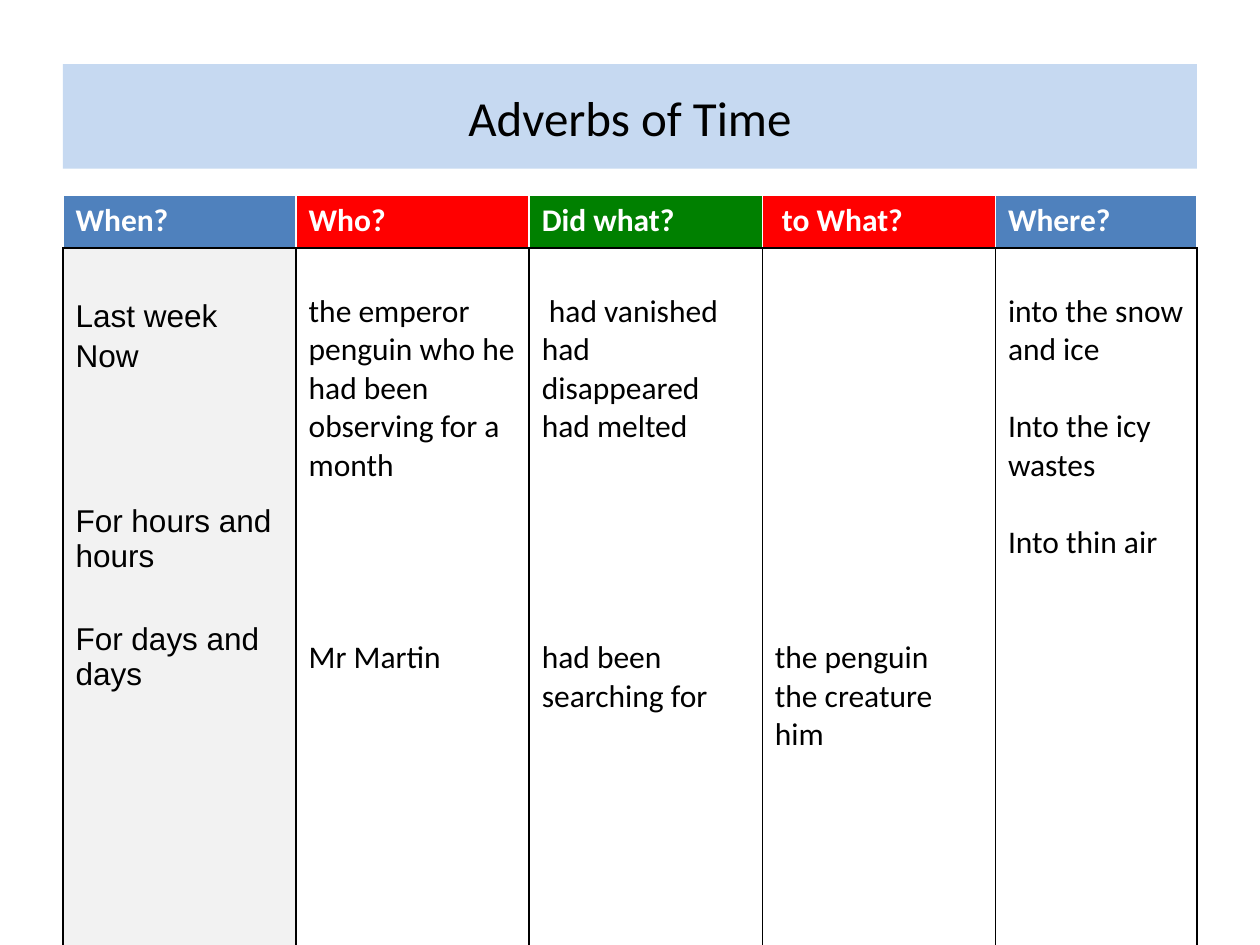
from pptx import Presentation
from pptx.dml.color import RGBColor
from pptx.enum.shapes import MSO_SHAPE
from pptx.enum.text import MSO_ANCHOR, PP_ALIGN
from pptx.oxml.ns import qn
from pptx.util import Inches, Pt
from lxml import etree

RECT = MSO_SHAPE.RECTANGLE
MIDDLE = MSO_ANCHOR.MIDDLE
CENTER = PP_ALIGN.CENTER

BLACK, WHITE, BLUE, RED, GREEN = "000000", "FFFFFF", "4F81BD", "FF0000", "008000"
GREY, PALE_BLUE = "F2F2F2", "C6D9F1"
LINE = 22

HEADERS = [("When?", BLUE), ("Who?", RED), ("Did what?", GREEN),
           (" to What?", RED), ("Where?", BLUE)]
COLUMNS = [
    ("Arial", GREY, 0.4, [("Last week", 0), ("Now", 3),
                          ("For hours and hours", 74), ("For days and days", 27)]),
    ("Calibri", WHITE, 0.35, [
        ("the emperor penguin who he had been observing for a month", 0),
        ("Mr Martin", 4 * LINE)]),
    ("Calibri", WHITE, 0.35, [(" had vanished", 0), ("had disappeared", 0),
                              ("had melted", 0), ("had been searching for", 5 * LINE)]),
    ("Calibri", WHITE, 3.1, [("the penguin", 0), ("the creature", 0), ("him", 0)]),
    ("Calibri", WHITE, 0.35, [("into the snow and ice", 0),
                              ("Into the icy wastes", LINE), ("Into thin air", LINE)]),
]


def rgb(value):
    return RGBColor.from_string(value)


class Deck:
    font = {"name": "Calibri", "size": Pt(18), "bold": False}

    def __init__(self):
        self.prs = Presentation()
        self.prs.slide_width, self.prs.slide_height = Inches(10), Inches(7.5)
        self.s = self.prs.slides.add_slide(self.prs.slide_layouts[6])

    def text(self, p, text, color, **fmt):
        r = p.add_run()
        r.text = text
        for key, value in {**self.font, **fmt}.items():
            setattr(r.font, key, value)
        r.font.color.rgb = rgb(color)

    def title(self, text, x, y, w, h):
        sp = self.s.shapes.add_shape(RECT, Inches(x), Inches(y), Inches(w), Inches(h))
        sp.shadow.inherit = False
        sp.fill.solid()
        sp.fill.fore_color.rgb = rgb(PALE_BLUE)
        sp.line.fill.background()
        tf = sp.text_frame
        tf.word_wrap = True
        tf.vertical_anchor = MIDDLE
        p = tf.paragraphs[0]
        p.alignment = CENTER
        self.text(p, text, BLACK, size=Pt(28))

    def table(self, x, y, widths, heights):
        table = self.s.shapes.add_table(
            len(heights), len(widths), Inches(x), Inches(y),
            Inches(sum(widths)), Inches(sum(heights))).table
        for col, width in zip(table.columns, widths):
            col.width = Inches(width)
        for row, height in zip(table.rows, heights):
            row.height = Inches(height)
        return table

    def cell(self, cell, paragraphs, fill, color, borders, top=0.05, **fmt):
        tcPr = cell._tc.get_or_add_tcPr()
        for side, border in zip("LRTB", borders):
            ln = etree.SubElement(tcPr, qn(f"a:ln{side}"), w=str(Pt(1)))
            solid = etree.SubElement(ln, qn("a:solidFill"))
            etree.SubElement(solid, qn("a:srgbClr"), val=border)
        cell.fill.solid()
        cell.fill.fore_color.rgb = rgb(fill)
        cell.margin_top = Inches(top)
        tf = cell.text_frame
        for i, (text, gap) in enumerate(paragraphs):
            p = tf.add_paragraph() if i else tf.paragraphs[0]
            if gap:
                p.space_before = Pt(gap)
            self.text(p, text, color, **fmt)


def main():
    deck = Deck()
    table = deck.table(0.5, 1.55, [1.85] * 4 + [1.6], [0.42, 8.15])
    for i, (header, fill) in enumerate(HEADERS):
        deck.cell(table.cell(0, i), [(header, 0)], fill, WHITE,
                  [WHITE] * 3 + [BLACK], bold=True)
    for i, (font, fill, top, paragraphs) in enumerate(COLUMNS):
        deck.cell(table.cell(1, i), paragraphs, fill, BLACK, [BLACK] * 4, top, name=font)
    deck.title("Adverbs of Time", 0.5, 0.51, 9, 0.83)
    deck.prs.save("out.pptx")


if __name__ == "__main__":
    main()
